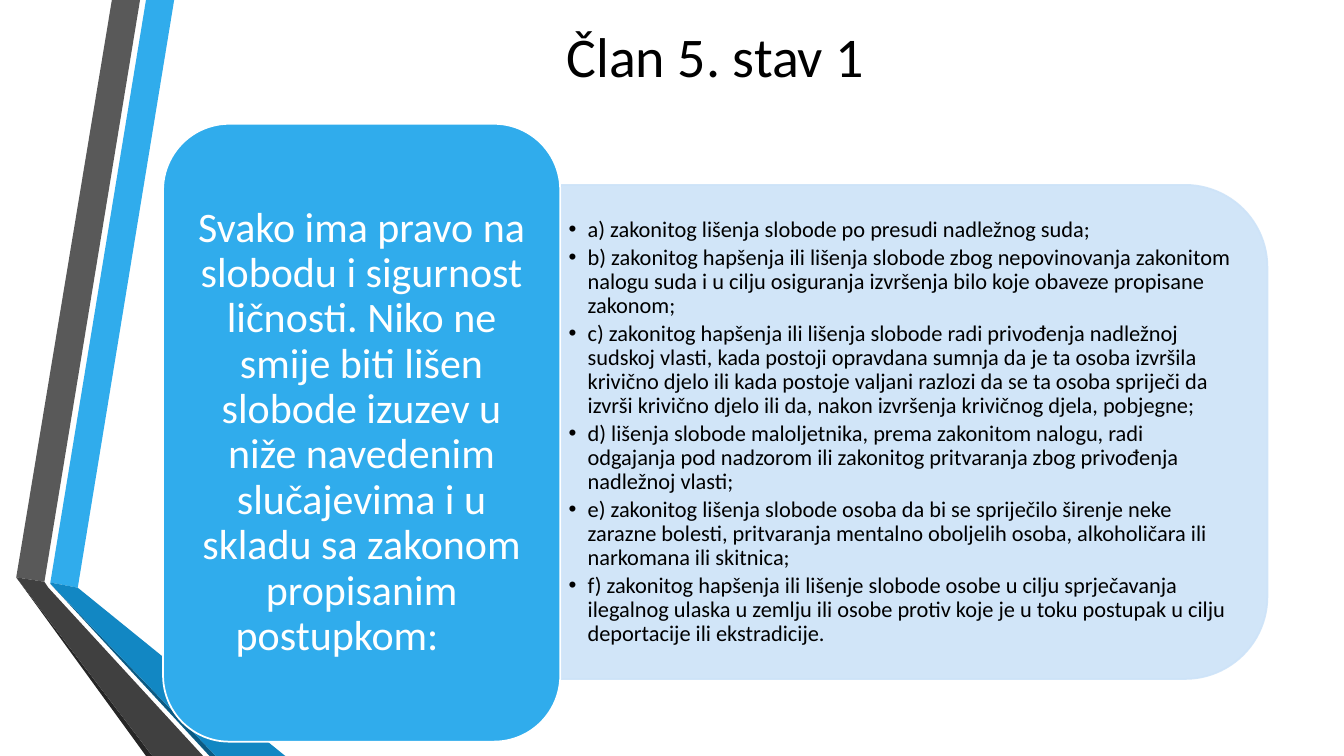
from dataclasses import dataclass

from lxml.etree import SubElement
from pptx import Presentation
from pptx.dml.color import RGBColor
from pptx.enum.shapes import MSO_SHAPE as Preset
from pptx.enum.text import MSO_ANCHOR as Anchor, MSO_AUTO_SIZE as AutoSize, PP_ALIGN as Align
from pptx.oxml.ns import qn
from pptx.util import Cm, Pt


@dataclass(frozen=True)
class Theme:
    font: str = "Calibri"
    text: str = "000000"
    white: str = "FFFFFF"
    accent: str = "30ACEC"
    accent_dark: str = "1287C3"
    accent_edge: str = "0C5A82"
    grey: str = "595959"
    grey_dark: str = "404040"
    grey_edge: str = "262626"
    panel: str = "CDE3F8"
    title_size: int = 40
    rule_size: int = 30
    list_size: int = 16
    outline: float = 1.25


THEME = Theme()
PAGE_WIDTH, PAGE_HEIGHT = 33.87, 19.05

RIBBONS = [
    (THEME.accent, [(1.27, 14.68), (1.96, 14.81), (4.39, 0), (3.68, 0)]),
    (THEME.grey, [(3.53, 0), (2.82, 0), (0.41, 14.55), (1.12, 14.66)]),
    (THEME.grey_edge, [(0.41, 14.55), (3.68, PAGE_HEIGHT), (3.84, PAGE_HEIGHT)]),
    (THEME.accent_edge, [(1.27, 14.71), (5.28, PAGE_HEIGHT), (5.44, PAGE_HEIGHT)]),
    (THEME.accent_dark, [(1.27, 14.68), (1.27, 14.71), (5.44, PAGE_HEIGHT),
                         (7.19, PAGE_HEIGHT), (1.96, 14.81)]),
    (THEME.grey_dark, [(5.12, PAGE_HEIGHT), (1.22, 14.81), (1.12, 14.66),
                       (0.41, 14.55), (3.84, PAGE_HEIGHT)]),
]

TITLE = "Član 5. stav 1"
RULE = ("Svako ima pravo na slobodu i sigurnost ličnosti. Niko ne smije biti lišen slobode "
        "izuzev u niže navedenim slučajevima i u skladu sa zakonom propisanim postupkom:\t")
EXCEPTIONS = [
    "a) zakonitog lišenja slobode po presudi nadležnog suda;",
    "b) zakonitog hapšenja ili lišenja slobode zbog nepovinovanja zakonitom nalogu suda i u "
    "cilju osiguranja izvršenja bilo koje obaveze propisane zakonom;",
    "c) zakonitog hapšenja ili lišenjа slobode radi privođenja nadležnoj sudskoj vlasti, kada "
    "postoji opravdana sumnja da je ta osoba izvršila krivično djelo ili kada postoje valjani "
    "razlozi da se ta osoba spriječi da izvrši krivično djelo ili da, nakon izvršenja krivičnog "
    "djela, pobjegne;",
    "d) lišenja slobode maloljetnika, prema zakonitom nalogu, radi odgajanja pod nadzorom ili "
    "zakonitog pritvaranja zbog privođenja nadležnoj vlasti;",
    "e) zakonitog lišenja slobode osoba da bi se spriječilo širenje neke zarazne bolesti, "
    "pritvaranja mentalno oboljelih osoba, alkoholičara ili narkomana ili skitnica;",
    "f) zakonitog hapšenja ili lišenje slobode osobe u cilju sprječavanja ilegalnog ulaska u "
    "zemlju ili osobe protiv koje je u toku postupak u cilju deportacije ili ekstradicije.",
]


def rgb(colour):
    return RGBColor.from_string(colour)


def place(shape, left, top, width, height):
    shape.left, shape.top, shape.width, shape.height = map(Cm, (left, top, width, height))


def bring_to_front(shape):
    shape.element.getparent().append(shape.element)


def set_frame(frame, side, edge):
    """Centre the text vertically, wrap it and set its margins in centimetres."""
    frame.word_wrap = True
    frame.auto_size = AutoSize.NONE
    frame.vertical_anchor = Anchor.MIDDLE
    frame.margin_left = frame.margin_right = Cm(side)
    frame.margin_top = frame.margin_bottom = Cm(edge)


def format_text(para, size, colour, align, spacing=1.0, after=0):
    para.alignment = align
    para.line_spacing = spacing
    para.space_before = Pt(0)
    para.space_after = Pt(after)
    for span in para.runs:
        span.font.name = THEME.font
        span.font.size = Pt(size)
        span.font.color.rgb = rgb(colour)


def add_bullet(para, indent):
    properties = para._p.get_or_add_pPr()
    properties.set("marL", str(Cm(indent)))
    properties.set("indent", str(-Cm(indent)))
    SubElement(properties, qn("a:buChar")).set("char", "•")


def set_opacity(shape, percent):
    """Apply one opacity to the fill and the outline."""
    for colour in shape.element.spPr.iter(qn("a:srgbClr")):
        SubElement(colour, qn("a:alpha")).set("val", str(percent * 1000))


def add_ribbon(page, colour, points):
    corners = [(Cm(x), Cm(y)) for x, y in points]
    builder = page.shapes.build_freeform(*corners[0])
    builder.add_line_segments(corners[1:], close=True)
    ribbon = builder.convert_to_shape()
    ribbon.shadow.inherit = False
    ribbon.fill.solid()
    ribbon.fill.fore_color.rgb = rgb(colour)
    ribbon.line.fill.background()


def add_card(page, preset, box, fill, line):
    card = page.shapes.add_shape(preset, *map(Cm, box))
    card.shadow.inherit = False
    card.fill.solid()
    card.fill.fore_color.rgb = rgb(fill)
    card.line.color.rgb = rgb(line)
    card.line.width = Pt(THEME.outline)
    return card


def fill_title(title):
    place(title, 4.11, 0, 27.84, 2.77)
    bring_to_front(title)
    title.text_frame.text = TITLE
    set_frame(title.text_frame, 0.25, 0.13)
    format_text(title.text_frame.paragraphs[0], THEME.title_size, THEME.text, Align.CENTER)


def fill_exceptions(body):
    place(body, 14.15, 5.28, 17.2, 11.23)
    bring_to_front(body)
    body.text_frame.text = "\n".join(EXCEPTIONS)
    set_frame(body.text_frame, 0.18, 0.08)
    for para in body.text_frame.paragraphs:
        para.level = 1
        format_text(para, THEME.list_size, THEME.text, Align.LEFT, 0.9, 2.4)
        add_bullet(para, 0.48)


def add_rule(page):
    card = add_card(page, Preset.ROUNDED_RECTANGLE, (4.11, 3.12, 10.01, 15.57),
                    THEME.accent, THEME.white)
    card.text_frame.text = RULE
    set_frame(card.text_frame, 0.3, 0.15)
    format_text(card.text_frame.paragraphs[0], THEME.rule_size, THEME.white, Align.CENTER, 0.9)


def main():
    deck = Presentation()
    deck.slide_width, deck.slide_height = Cm(PAGE_WIDTH), Cm(PAGE_HEIGHT)
    page = deck.slides.add_slide(deck.slide_layouts[1])
    for colour, points in RIBBONS:
        add_ribbon(page, colour, points)
    fill_title(page.shapes.title)
    panel = add_card(page, Preset.ROUND_2_SAME_RECTANGLE, (16.81, 1.98, 12.45, 17.81),
                     THEME.panel, THEME.panel)
    panel.rotation = 90
    set_opacity(panel, 90)
    fill_exceptions(page.placeholders[1])
    add_rule(page)
    deck.save("out.pptx")


if __name__ == "__main__":
    main()
